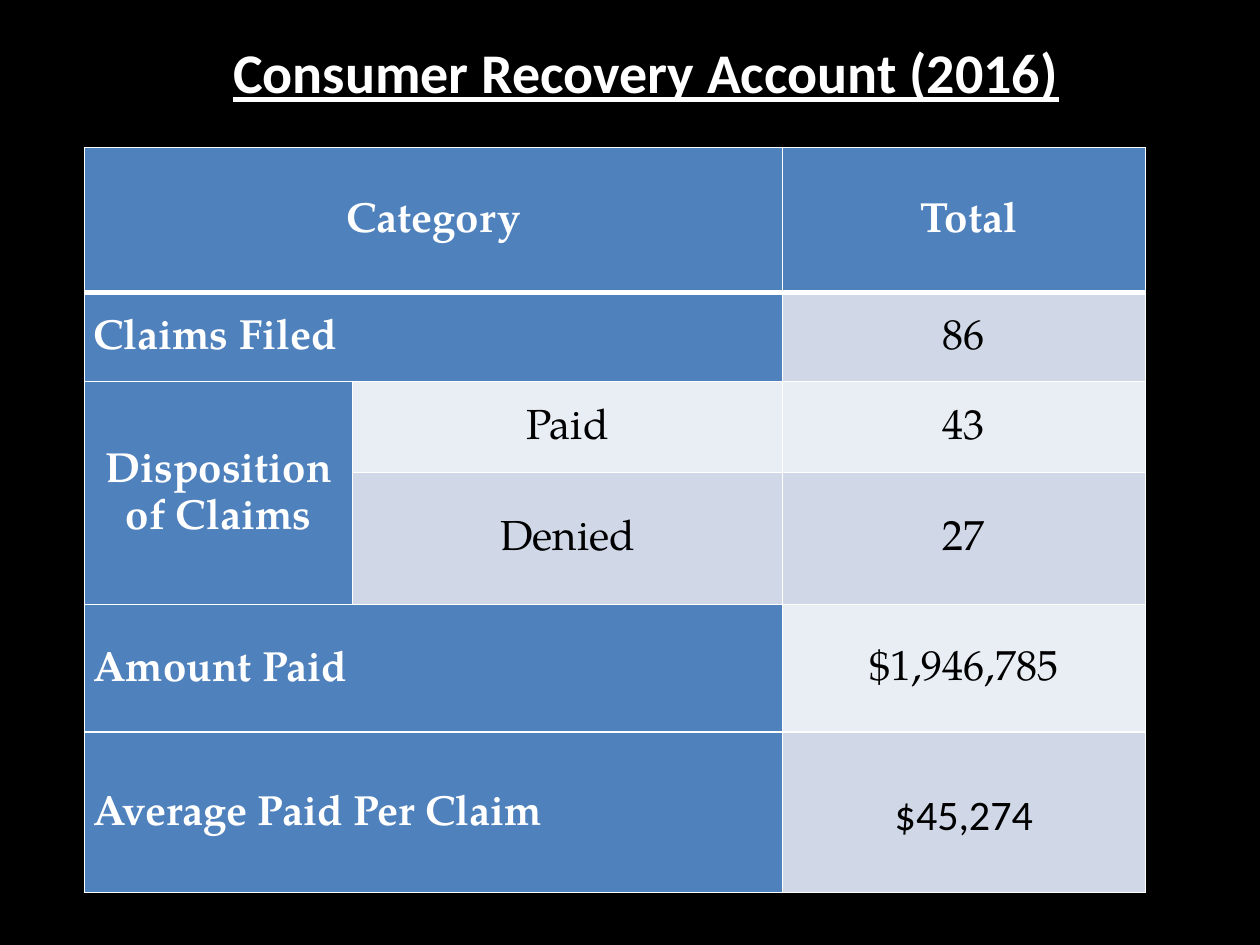
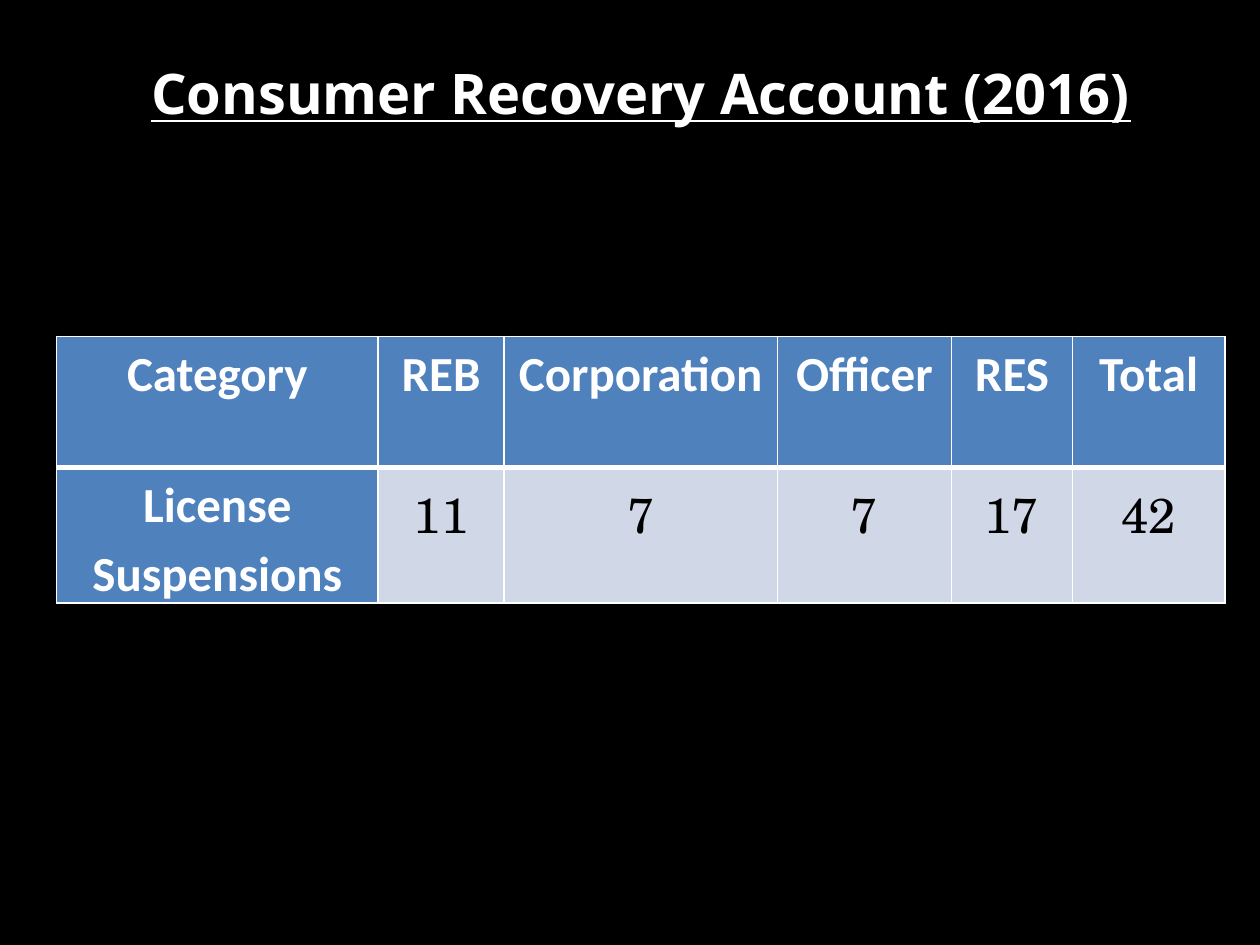
from lxml import etree
from pptx import Presentation
from pptx import util as u
from pptx.dml.color import RGBColor
from pptx.enum import text
from pptx.oxml.ns import qn

BLACK, WHITE = "000000", "FFFFFF"
LABEL_BLUE = "4F81BD"
BANDS = ("E9EDF4", "D0D8E8")  # even rows, odd rows
HEADING = "Consumer Recovery Account (2016)"
TITLE_ONLY = 5


def rgb(value):
    return RGBColor.from_string(value)


def add_borders(cell, top, bottom):
    """Rule all four sides in white; top and bottom are widths in points."""
    widths = (("a:lnL", 1), ("a:lnR", 1), ("a:lnT", top), ("a:lnB", bottom))
    properties = cell._tc.get_or_add_tcPr()
    for place, (side, width) in enumerate(widths):
        line = etree.Element(qn(side), w=str(u.Pt(width)))
        fill = etree.SubElement(line, qn("a:solidFill"))
        etree.SubElement(fill, qn("a:srgbClr"), val=WHITE)
        properties.insert(place, line)


class Deck:
    def __init__(self):
        self.presentation = Presentation()
        self.presentation.slide_width = u.Cm(25.4)
        self.presentation.slide_height = u.Cm(19.05)
        self.slide = None

    def start_slide(self):
        layout = self.presentation.slide_layouts[TITLE_ONLY]
        self.slide = self.presentation.slides.add_slide(layout)
        background = self.slide.background.fill
        background.solid()
        background.fore_color.rgb = rgb(BLACK)

    def format_paragraph(self, paragraph, font, size, color, bold, centred=True):
        paragraph.alignment = text.PP_ALIGN.CENTER if centred else text.PP_ALIGN.LEFT
        paragraph.line_spacing = 1.15
        paragraph.font.name = font
        paragraph.font.size = u.Pt(size)
        paragraph.font.bold = bold
        paragraph.font.color.rgb = rgb(color)

    def title(self, left, top, width, font):
        heading = self.slide.shapes.title
        heading.left, heading.top = u.Cm(left), u.Cm(top)
        heading.width, heading.height = u.Cm(width), u.Cm(1.8)
        frame = heading.text_frame
        frame.text = HEADING
        frame.word_wrap = True
        frame.auto_size = text.MSO_AUTO_SIZE.SHAPE_TO_FIT_TEXT
        frame.vertical_anchor = text.MSO_ANCHOR.TOP
        paragraph = frame.paragraphs[0]
        self.format_paragraph(paragraph, font, 32, WHITE, True)
        paragraph.space_after = u.Pt(10)
        paragraph.font.underline = True

    def table(self, left, top, columns, heights, rows, label_font, value_font,
              size, anchor, merges=(), special_fonts=None):
        """Header row and first column are blue labels; the rest is banded."""
        table = self.slide.shapes.add_table(
            len(heights), len(columns), u.Cm(left), u.Cm(top),
            u.Cm(sum(columns)), u.Cm(sum(heights))).table
        for column, width in zip(table.columns, columns):
            column.width = u.Cm(width)
        for row, height in zip(table.rows, heights):
            row.height = u.Cm(height)
        for first, last in merges:
            table.cell(*first).merge(table.cell(*last))

        for r, row in enumerate(rows):
            for c, wording in enumerate(row):
                cell = table.cell(r, c)
                is_label = r == 0 or c == 0
                cell.fill.solid()
                cell.fill.fore_color.rgb = rgb(LABEL_BLUE if is_label else BANDS[r % 2])
                add_borders(cell, top=3 if r == 1 else 1, bottom=3 if r == 0 else 1)
                if cell.is_spanned:
                    continue
                cell.margin_left = cell.margin_right = u.Cm(0.18)
                cell.margin_top = cell.margin_bottom = 0
                cell.vertical_anchor = anchor
                cell.text = wording
                wide_label = r > 0 and cell.is_merge_origin and cell.span_width > 1
                font = label_font if is_label else value_font
                font = (special_fonts or {}).get((r, c), font)
                paragraph = cell.text_frame.paragraphs[0]
                self.format_paragraph(paragraph, font, size,
                                      WHITE if is_label else BLACK,
                                      is_label, centred=not wide_label)
                paragraph.space_after = u.Pt(6)


def main():
    deck = Deck()

    deck.start_slide()
    deck.title(1.27, 0.43, 23.5, "Calibri")
    deck.table(
        1.7, 2.97,
        columns=(5.41, 8.66, 7.32),
        heights=(2.92, 1.8, 1.83, 2.67, 2.57, 3.23),
        rows=(
            ("Category", "", " Total"),
            ("Claims Filed", "", "86"),
            ("Disposition of Claims", "Paid", "43"),
            ("", "Denied", "27"),
            ("Amount Paid", "", "$1,946,785"),
            ("Average Paid Per Claim", "", "$45,274"),
        ),
        label_font="TeX Gyre Pagella", value_font="TeX Gyre Pagella",
        size=24, anchor=text.MSO_ANCHOR.MIDDLE,
        merges=[((r, 0), (r, 1)) for r in (0, 1, 4, 5)] + [((2, 0), (3, 0))],
        special_fonts={(5, 2): "Calibri"})

    deck.start_slide()
    deck.title(1.07, 0.84, 23.7, "Noto Sans")
    deck.table(
        1.14, 6.78,
        columns=(6.48, 2.54, 5.51, 3.51, 2.44, 3.07),
        heights=(2.64, 2.74),
        rows=(
            ("Category", "REB", "Corporation", "Officer", "RES", "Total"),
            ("License Suspensions", "11", "7", "7", "17", "42"),
        ),
        label_font="Calibri", value_font="TeX Gyre Schola",
        size=28, anchor=text.MSO_ANCHOR.TOP)

    deck.presentation.save("out.pptx")


if __name__ == "__main__":
    main()
